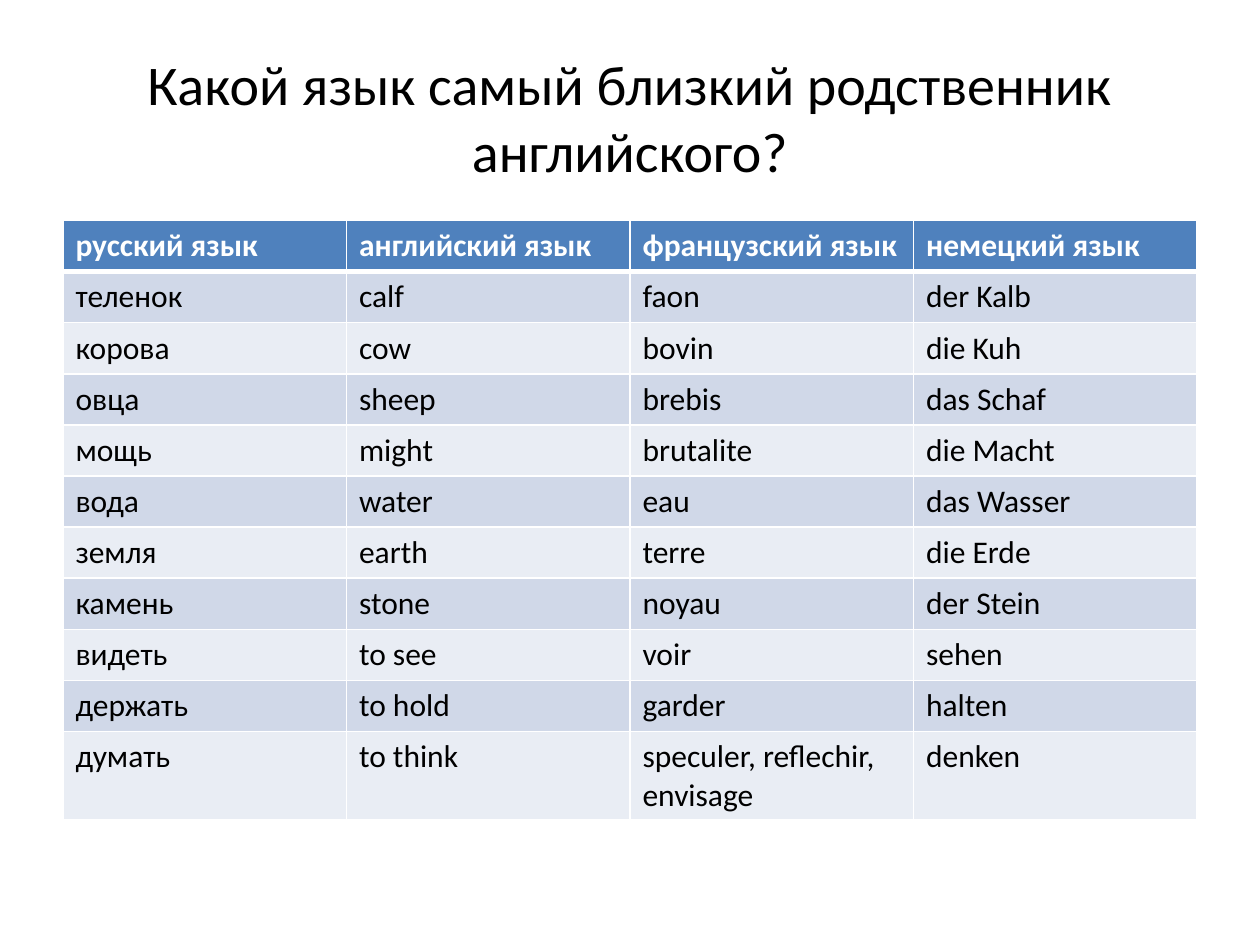
from lxml import etree
from pptx import Presentation
from pptx.dml.color import RGBColor
from pptx.enum import text
from pptx.oxml import ns
from pptx.util import Pt

TITLE = "Какой язык самый близкий родственник английского?"
WORDS = [
    ("русский язык", "английский язык", "французский язык", "немецкий язык"),
    ("теленок", "calf", "faon", "der Kalb"),
    ("корова", "cow", "bovin", "die Kuh"),
    ("овца", "sheep", "brebis", "das Schaf"),
    ("мощь", "might", "brutalite", "die Macht"),
    ("вода", "water", "eau", "das Wasser"),
    ("земля", "earth", "terre", "die Erde"),
    ("камень", "stone", "noyau", "der Stein"),
    ("видеть", "to see", "voir", "sehen"),
    ("держать", "to hold", "garder", "halten"),
    ("думать", "to think", "speculer, reflechir, envisage", "denken"),
]
HEADER = {"fill": "4F81BD", "color": "FFFFFF", "bold": True}
BANDS = [
    {"fill": "D0D8E8", "color": "000000", "bold": False},
    {"fill": "E9EDF4", "color": "000000", "bold": False},
]


def rgb(value):
    return RGBColor.from_string(value)


class Deck:
    """Holds the text style and the current slide."""

    font = "Calibri"
    border = "FFFFFF"

    def __init__(self, prs):
        self.s = prs.slides.add_slide(prs.slide_layouts[6])

    def add_text(self, tf, content, size, color, bold=False):
        p = tf.paragraphs[0]
        r = p.add_run()
        r.text = content
        for name, value in {"name": self.font, "size": Pt(size), "bold": bold}.items():
            setattr(r.font, name, value)
        r.font.color.rgb = rgb(color)
        return p

    def title(self, content, x, y, w, h):
        tf = self.s.shapes.add_textbox(Pt(x), Pt(y), Pt(w), Pt(h)).text_frame
        tf.word_wrap = True
        tf.vertical_anchor = text.MSO_ANCHOR.MIDDLE
        p = self.add_text(tf, content, 32, "000000")
        p.alignment = text.PP_ALIGN.CENTER

    def edges(self, cell, widths):
        """Draw cell borders; widths maps the sides L, R, T, B to points."""
        tcPr = cell._tc.get_or_add_tcPr()
        for side, width in widths.items():
            ln = etree.SubElement(tcPr, ns.qn(f"a:ln{side}"), w=str(Pt(width)))
            fill = etree.SubElement(ln, ns.qn("a:solidFill"))
            etree.SubElement(fill, ns.qn("a:srgbClr"), val=self.border)

    def table(self, rows, x, y, w, row_h):
        frame = self.s.shapes.add_table(
            len(rows), len(rows[0]), Pt(x), Pt(y), Pt(w), Pt(row_h * len(rows)))
        table = frame.table
        for i, row in enumerate(rows):
            table.rows[i].height = Pt(row_h)
            look = BANDS[(i - 1) % 2] if i else HEADER
            widths = {"L": 1, "R": 1, "T": 3 if i == 1 else 1, "B": 1 if i else 3}
            for j, content in enumerate(row):
                cell = table.cell(i, j)
                self.edges(cell, widths)
                cell.fill.solid()
                cell.fill.fore_color.rgb = rgb(look["fill"])
                self.add_text(cell.text_frame, content, 18, look["color"], look["bold"])


def main():
    prs = Presentation()
    prs.slide_width, prs.slide_height = Pt(720), Pt(540)
    deck = Deck(prs)
    deck.title(TITLE, 36, 21.6, 648, 90)
    deck.table(WORDS, 36, 126, 648, 29.2)
    prs.save("out.pptx")


if __name__ == "__main__":
    main()
